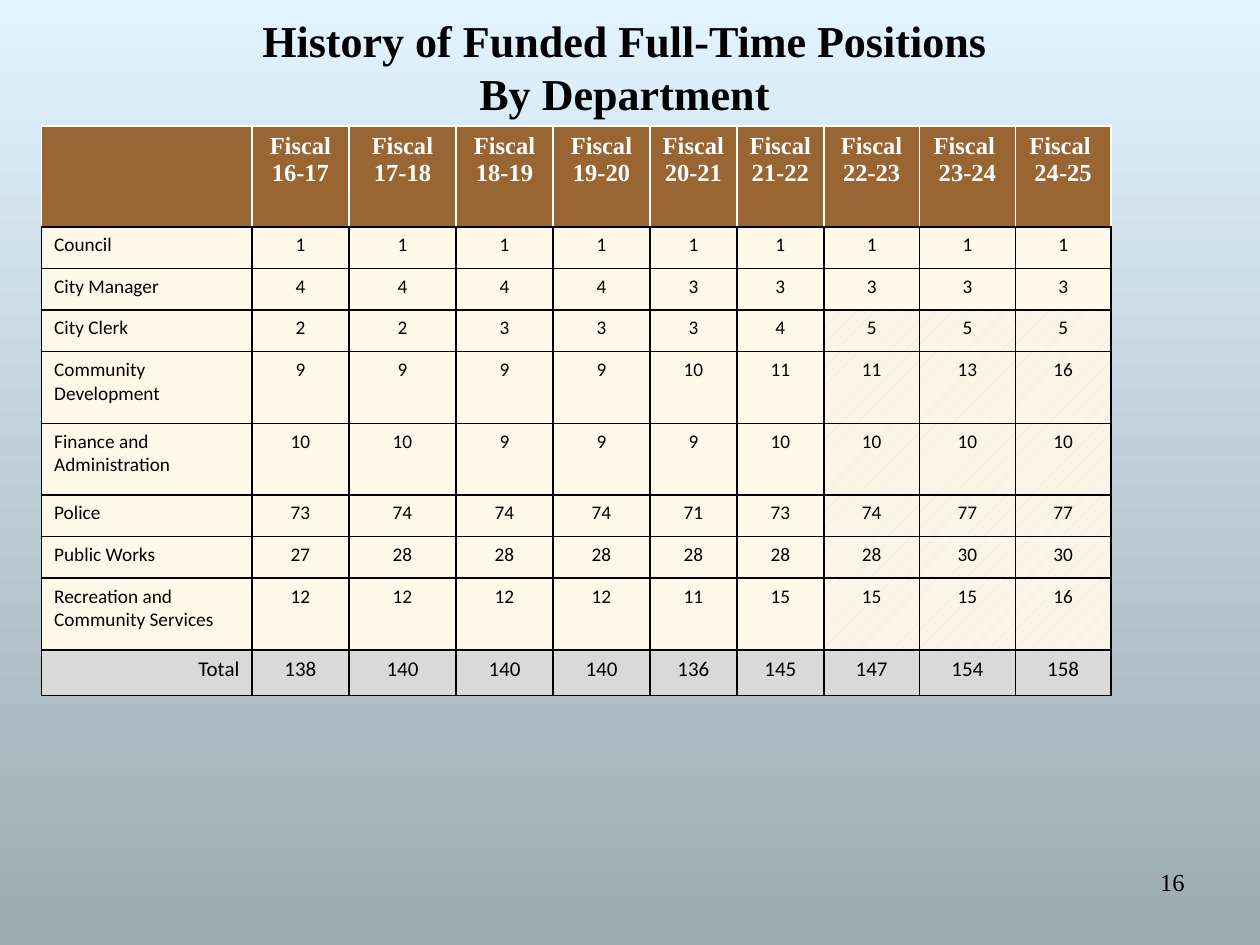
from dataclasses import dataclass

from lxml.etree import SubElement
from pptx import Presentation
from pptx.dml.color import RGBColor
from pptx.enum.dml import MSO_PATTERN
from pptx.enum.text import MSO_ANCHOR, MSO_AUTO_SIZE, PP_ALIGN
from pptx.oxml.ns import qn
from pptx.util import Inches, Pt


@dataclass(frozen=True)
class Theme:
    sky: str = "E1F4FF"
    slate: str = "9DAAB2"
    black: str = "000000"
    white: str = "FFFFFF"
    brown: str = "996633"
    cream: str = "FFF9E9"
    dots: str = "C5F0FF"
    dotted_cream: str = "FAF5E6"
    grey: str = "D9D9D9"
    serif: str = "Times New Roman"
    sans: str = "Calibri"
    title_size: float = 25.2
    header_size: float = 14
    body_size: float = 11
    total_size: float = 12
    border: float = 1


THEME = Theme()

YEARS = ["16-17", "17-18", "18-19", "19-20", "20-21", "21-22", "22-23", "23-24", "24-25"]
DEPARTMENTS = [
    ("Council", [1, 1, 1, 1, 1, 1, 1, 1, 1]),
    ("City Manager", [4, 4, 4, 4, 3, 3, 3, 3, 3]),
    ("City Clerk", [2, 2, 3, 3, 3, 4, 5, 5, 5]),
    ("Community\nDevelopment", [9, 9, 9, 9, 10, 11, 11, 13, 16]),
    ("Finance and\nAdministration", [10, 10, 9, 9, 9, 10, 10, 10, 10]),
    ("Police", [73, 74, 74, 74, 71, 73, 74, 77, 77]),
    ("Public Works", [27, 28, 28, 28, 28, 28, 28, 30, 30]),
    ("Recreation and Community Services", [12, 12, 12, 12, 11, 15, 15, 15, 16]),
]
COLUMN_WIDTHS = [1.67, 0.77, 0.85, 0.77, 0.77, 0.69, 0.69, 0.76, 0.76, 0.76]
HEADER_HEIGHT, LINE_HEIGHT, WRAPPED_HEIGHT, TOTAL_HEIGHT = 0.8, 0.33, 0.57, 0.36
DOTTED_FROM_ROW, DOTTED_FROM_COLUMN = 3, 7


def rgb(colour):
    return RGBColor.from_string(colour)


def write(paragraph, words, size, font=THEME.serif, colour=THEME.black, bold=False,
          align=PP_ALIGN.CENTER):
    paragraph.alignment = align
    run = paragraph.add_run()
    run.text = words
    run.font.name = font
    run.font.size = Pt(size)
    run.font.bold = bold
    run.font.color.rgb = rgb(colour)


def paint_background(slide):
    fill = slide.background.fill
    fill.gradient()
    fill.gradient_angle = 270
    for stop, colour, position in zip(fill.gradient_stops, (THEME.sky, THEME.slate), (0, 1)):
        stop.color.rgb = rgb(colour)
        stop.position = position


def add_title(slide, width):
    title = slide.shapes.title
    title.left, title.top, title.width, title.height = 0, 0, width, Inches(1)
    frame = title.text_frame
    frame.auto_size = MSO_AUTO_SIZE.NONE
    frame.vertical_anchor = MSO_ANCHOR.BOTTOM
    heading = frame.paragraphs[0]
    write(heading, "History of Funded Full-Time Positions ", THEME.title_size, bold=True)
    heading.add_line_break()
    write(heading, "By Department ", THEME.title_size, bold=True)


def add_page_number(slide, number):
    corner = slide.shapes.add_textbox(Inches(7.17), Inches(6.83), Inches(2.33), Inches(0.52))
    corner.text_frame.word_wrap = True
    write(corner.text_frame.paragraphs[0], number, THEME.header_size, align=PP_ALIGN.RIGHT)


def set_borders(cell, sides, bottom):
    """Draw left, right and top in one colour, the bottom in another."""
    properties = cell._tc.get_or_add_tcPr()
    for edge, colour in (("L", sides), ("R", sides), ("T", sides), ("B", bottom)):
        line = SubElement(properties, qn(f"a:ln{edge}"), w=str(Pt(THEME.border)))
        SubElement(SubElement(line, qn("a:solidFill")), qn("a:srgbClr"), val=colour)


def fill_cell(cell, words, fill, sides=THEME.black, **style):
    set_borders(cell, sides, THEME.black)
    cell.fill.solid()
    cell.fill.fore_color.rgb = rgb(fill)
    if not words:
        return
    frame = cell.text_frame
    for index, line in enumerate(words.split("\n")):
        paragraph = frame.add_paragraph() if index else frame.paragraphs[0]
        write(paragraph, line, **style)


def dot_cell(cell):
    cell.fill.patterned()
    cell.fill.pattern = MSO_PATTERN.PERCENT_5
    cell.fill.fore_color.rgb = rgb(THEME.dots)
    cell.fill.back_color.rgb = rgb(THEME.dotted_cream)


def fill_header(table):
    # The two latest years carry a space after "Fiscal".
    labels = [""] + [f"Fiscal\n{year}" for year in YEARS[:-2]]
    labels += [f"Fiscal \n{year}" for year in YEARS[-2:]]
    for column, label in enumerate(labels):
        fill_cell(table.cell(0, column), label, THEME.brown, THEME.white,
                  size=THEME.header_size, colour=THEME.white, bold=True)


def fill_row(table, row, label, counts, fill, size, label_align):
    for column, words in enumerate([label, *map(str, counts)]):
        fill_cell(table.cell(row, column), words, fill, size=size, font=THEME.sans,
                  align=PP_ALIGN.CENTER if column else label_align)


def add_positions_table(slide):
    heights = [HEADER_HEIGHT]
    heights += [WRAPPED_HEIGHT if len(name) > 12 else LINE_HEIGHT for name, _ in DEPARTMENTS]
    heights.append(TOTAL_HEIGHT)
    table = slide.shapes.add_table(
        len(heights), len(COLUMN_WIDTHS), Inches(0.33), Inches(1),
        Inches(sum(COLUMN_WIDTHS)), Inches(sum(heights))).table
    table.first_row = table.horz_banding = False
    for column, width in zip(table.columns, COLUMN_WIDTHS):
        column.width = Inches(width)
    for row, height in zip(table.rows, heights):
        row.height = Inches(height)

    fill_header(table)
    for row, (name, counts) in enumerate(DEPARTMENTS, start=1):
        fill_row(table, row, name, counts, THEME.cream, THEME.body_size, PP_ALIGN.LEFT)
        if row >= DOTTED_FROM_ROW:
            for column in range(DOTTED_FROM_COLUMN, len(COLUMN_WIDTHS)):
                dot_cell(table.cell(row, column))
    totals = [sum(year) for year in zip(*(counts for _, counts in DEPARTMENTS))]
    fill_row(table, len(heights) - 1, "Total", totals, THEME.grey, THEME.total_size,
             PP_ALIGN.RIGHT)


def main():
    deck = Presentation()
    deck.slide_width, deck.slide_height = Inches(10), Inches(7.5)
    slide = deck.slides.add_slide(deck.slide_layouts.get_by_name("Title Only"))
    paint_background(slide)
    add_title(slide, deck.slide_width)
    add_page_number(slide, "16")
    add_positions_table(slide)
    deck.save("out.pptx")


if __name__ == "__main__":
    main()
